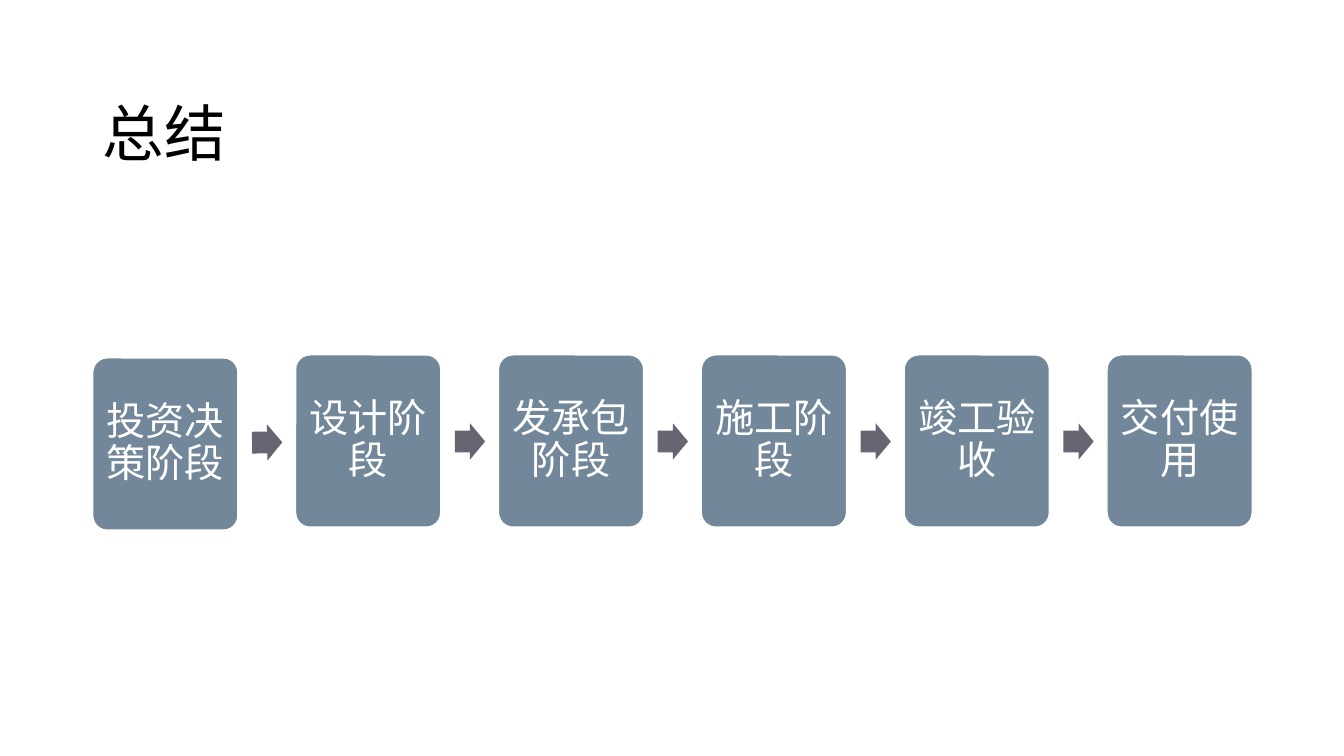
from lxml.etree import SubElement
from pptx import Presentation
from pptx.dml.color import RGBColor
from pptx.enum.shapes import MSO_SHAPE
from pptx.enum.text import MSO_ANCHOR, PP_ALIGN
from pptx.oxml.ns import qn
from pptx.util import Inches, Pt

BLACK = RGBColor(0x00, 0x00, 0x00)
WHITE = RGBColor(0xFF, 0xFF, 0xFF)
SLATE = RGBColor(0x72, 0x87, 0x99)
PLUM = RGBColor(0x68, 0x65, 0x73)

STAGES = ["投资决策阶段", "设计阶段", "发承包阶段", "施工阶段", "竣工验收", "交付使用"]
LEFT, RIGHT = 0.92, 12.42
STAGE_WIDTH = 1.44
PITCH = (RIGHT - LEFT - STAGE_WIDTH) / (len(STAGES) - 1)
STAGE_TOP, FIRST_STAGE_TOP = 3.52, 3.55
ARROW_OFFSET = 1.58


class ProcessSlide:
    heading_font = "Times New Roman"
    east_asian_font = "Noto Sans CJK SC"

    def __init__(self, presentation):
        self.slide = presentation.slides.add_slide(presentation.slide_layouts[6])

    def set_text(self, shape, text, size, color, font_name, spacing, alignment):
        frame = shape.text_frame
        frame.word_wrap = True
        frame.vertical_anchor = MSO_ANCHOR.MIDDLE
        paragraph = frame.paragraphs[0]
        paragraph.text = text
        paragraph.alignment = alignment
        paragraph.line_spacing = spacing
        font = paragraph.font
        font.size = Pt(size)
        font.color.rgb = color
        font.name = font_name
        properties = paragraph._p.pPr.find(qn("a:defRPr"))
        SubElement(properties, qn("a:ea"), typeface=self.east_asian_font)

    def title(self, text):
        box = self.slide.shapes.add_textbox(
            Inches(LEFT), Inches(0.4), Inches(11.5), Inches(1.45))
        self.set_text(box, text, 44, BLACK, self.heading_font, 1.5, PP_ALIGN.LEFT)

    def filled_shape(self, kind, left, top, width, height, color, adjustments):
        shape = self.slide.shapes.add_shape(
            kind, Inches(left), Inches(top), Inches(width), Inches(height))
        shape.shadow.inherit = False
        shape.fill.solid()
        shape.fill.fore_color.rgb = color
        shape.line.fill.background()
        for index, value in enumerate(adjustments):
            shape.adjustments[index] = value
        return shape

    def stage(self, text, left, top):
        shape = self.filled_shape(
            MSO_SHAPE.ROUNDED_RECTANGLE, left, top, STAGE_WIDTH, 1.71, SLATE, [0.1])
        shape.line.color.rgb = WHITE
        shape.line.width = Pt(1)
        frame = shape.text_frame
        frame.margin_left = frame.margin_right = Inches(0.08)
        frame.margin_top = frame.margin_bottom = Inches(0.08)
        self.set_text(shape, text, 28, WHITE, self.east_asian_font, 0.9, PP_ALIGN.CENTER)

    def arrow(self, left, top, rotation):
        shape = self.filled_shape(
            MSO_SHAPE.RIGHT_ARROW, left, top, 0.3, 0.36, PLUM, [0.6, 0.5])
        shape.rotation = rotation


def main():
    presentation = Presentation()
    presentation.slide_width = Inches(13.33)
    presentation.slide_height = Inches(7.5)
    process = ProcessSlide(presentation)
    process.title("总结")
    for index, stage in enumerate(STAGES):
        left = LEFT + index * PITCH
        first = index == 0
        process.stage(stage, left, FIRST_STAGE_TOP if first else STAGE_TOP)
        if index < len(STAGES) - 1:
            # The first arrow tilts up from the slightly lower first stage
            process.arrow(left + ARROW_OFFSET, 4.21 if first else 4.2,
                          359.3 if first else 0)
    presentation.save("out.pptx")


if __name__ == "__main__":
    main()
